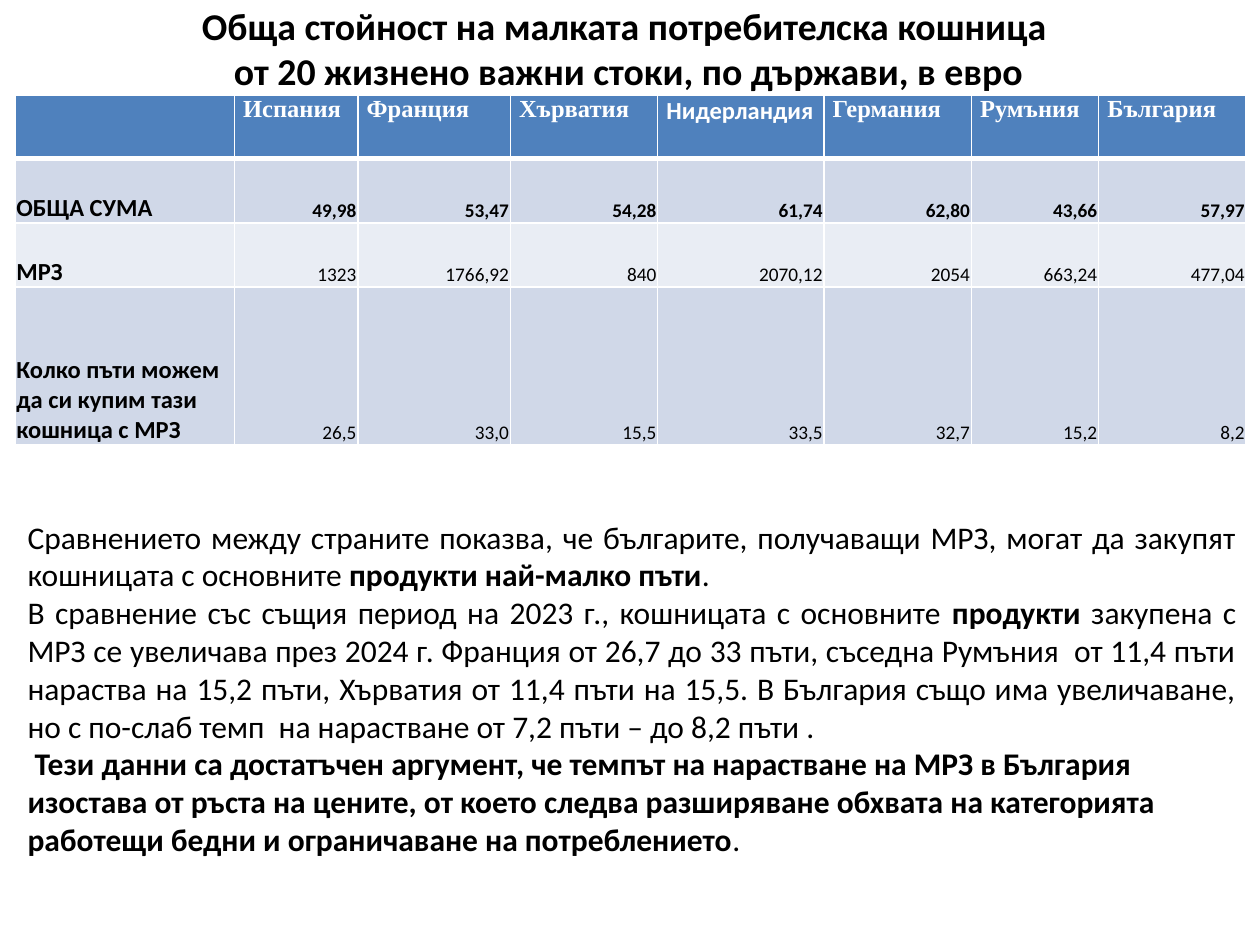
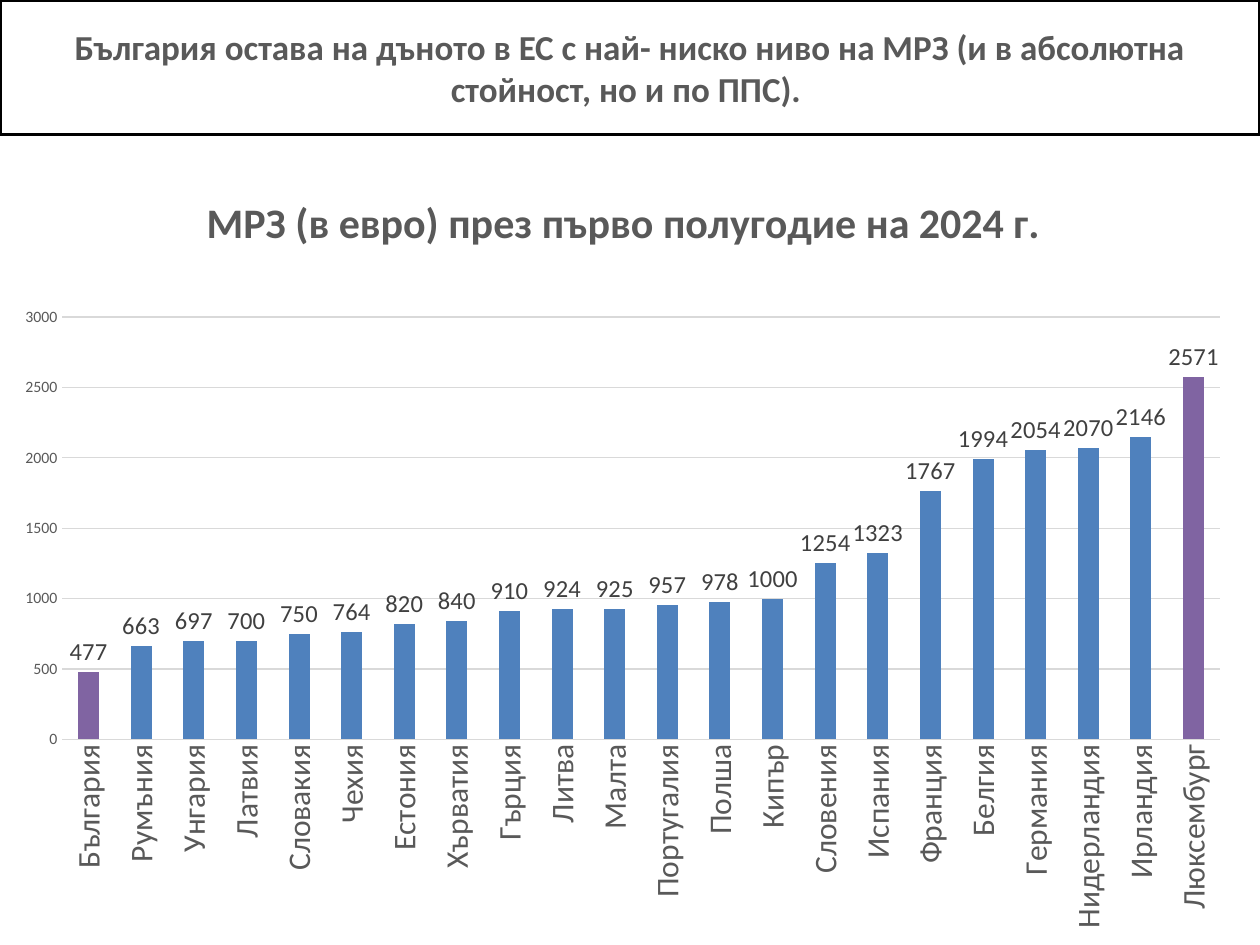
from lxml import etree
from pptx import Presentation
from pptx.chart.data import CategoryChartData
from pptx.dml.color import RGBColor
from pptx.enum.chart import XL_CHART_TYPE, XL_LABEL_POSITION, XL_TICK_MARK
from pptx.enum.shapes import MSO_SHAPE
from pptx.enum.text import MSO_ANCHOR, PP_ALIGN
from pptx.oxml.ns import qn
from pptx.util import Inches, Pt

LEFT, CENTER, RIGHT, JUSTIFY = PP_ALIGN.LEFT, PP_ALIGN.CENTER, PP_ALIGN.RIGHT, PP_ALIGN.JUSTIFY
TOP, MIDDLE, BOTTOM = MSO_ANCHOR.TOP, MSO_ANCHOR.MIDDLE, MSO_ANCHOR.BOTTOM
COLUMNS, RECTANGLE = XL_CHART_TYPE.COLUMN_CLUSTERED, MSO_SHAPE.RECTANGLE
OUTSIDE, NO_TICK = XL_LABEL_POSITION.OUTSIDE_END, XL_TICK_MARK.NONE

FONT, SERIF = "Calibri", "Times New Roman"
BLACK, WHITE, GREY, DARK_GREY, GRID = "000000", "FFFFFF", "595959", "404040", "D9D9D9"
BLUE, PURPLE, BAND_DARK, BAND_LIGHT = "4F81BD", "8064A2", "D0D8E8", "E9EDF4"

BASKET_TITLE = ["Обща стойност на малката потребителска кошница",
                " от 20 жизнено важни стоки, по държави, в евро"]
COUNTRIES = ["Испания", "Франция", "Хърватия", "Нидерландия", "Германия", "Румъния", "България"]
BASKET_ROWS = [
    ("ОБЩА СУМА", "49,98 53,47 54,28 61,74 62,80 43,66 57,97", BAND_DARK, True),
    ("МРЗ", "1323 1766,92 840 2070,12 2054 663,24 477,04", BAND_LIGHT, False),
    ("Колко пъти можем да си купим тази кошница с МРЗ",
     "26,5 33,0 15,5 33,5 32,7 15,2 8,2", BAND_DARK, False),
]
COLUMN_WIDTHS = [1.74, 0.98, 1.21, 1.17, 1.32, 1.17, 1.01, 1.17]
ROW_HEIGHTS = [0.5, 0.51, 0.51, 1.25]
COMMENTS = [
    (JUSTIFY, [
        ("Сравнението между страните показва, че българите, получаващи МРЗ, могат да закупят "
         "кошницата с основните ", False),
        ("продукти най-малко пъти", True), (". ", False)]),
    (JUSTIFY, [
        ("В сравнение със същия период на 2023 г., кошницата с основните ", False),
        ("продукти", True),
        (" закупена с МРЗ се увеличава през 2024 г. Франция от 26,7 до 33 пъти, съседна Румъния  "
         "от 11,4 пъти нараства на 15,2 пъти, Хърватия от 11,4 пъти на 15,5. В България също има "
         "увеличаване, но с по-слаб темп  на нарастване от 7,2 пъти – до 8,2 пъти . ", False)]),
    (LEFT, [
        (" Тези данни са достатъчен аргумент, че темпът на нарастване на МРЗ в България изостава "
         "от ръста на цените, от което следва разширяване обхвата на категорията работещи бедни "
         "и ограничаване на потреблението", True), (".", False)]),
]
EU_TITLE = ["България остава на дъното в ЕС с най- ниско ниво на МРЗ "
            "(и в абсолютна стойност, но и по ППС). "]
CHART_TITLE = "МРЗ (в евро) през първо полугодие на 2024 г. "
MIN_WAGES = {
    "България": 477, "Румъния": 663, "Унгария": 697, "Латвия": 700, "Словакия": 750,
    "Чехия": 764, "Естония": 820, "Хърватия": 840, "Гърция": 910, "Литва": 924, "Малта": 925,
    "Португалия": 957, "Полша": 978, "Кипър": 1000, "Словения": 1254, "Испания": 1323,
    "Франция": 1767, "Белгия": 1994, "Германия": 2054, "Нидерландия": 2070,
    "Ирландия": 2146, "Люксембург": 2571,
}
HIGHLIGHTED = ("България", "Люксембург")


def rgb(value):
    """Turn a hex string into a colour."""
    return RGBColor.from_string(value)


def set_attrs(obj, **values):
    """Set several attributes of an object."""
    for name, value in values.items():
        setattr(obj, name, value)


def style_font(font, size, color, bold=False, name=FONT):
    """Give a font its size, colour, weight and typeface."""
    set_attrs(font, size=Pt(size), bold=bold, name=name)
    font.color.rgb = rgb(color)


def fill_solid(obj, color):
    """Fill a shape, cell, series or point with one colour."""
    obj.fill.solid()
    obj.fill.fore_color.rgb = rgb(color)


def style_line(line, color, width):
    """Give a line its colour and width."""
    line.color.rgb = rgb(color)
    line.width = Pt(width)


def write_paragraphs(tf, paragraphs, size, color, name=FONT):
    """Write (alignment, [(text, bold)]) paragraphs into a text frame."""
    for i, (align, runs) in enumerate(paragraphs):
        p = tf.paragraphs[0] if i == 0 else tf.add_paragraph()
        p.alignment = align
        for text, bold in runs:
            r = p.add_run()
            r.text = text
            style_font(r.font, size, color, bold, name)


def add_text(s, box, paragraphs, size, color, anchor=TOP):
    """Add a wrapping text box."""
    sp = s.shapes.add_textbox(*map(Inches, box))
    set_attrs(sp.text_frame, word_wrap=True, vertical_anchor=anchor)
    write_paragraphs(sp.text_frame, paragraphs, size, color)
    return sp


def add_title(s, lines, box, size, color):
    """Add a bold centred title, one paragraph for each line."""
    return add_text(s, box, [(CENTER, [(line, True)]) for line in lines], size, color, MIDDLE)


def set_borders(cell, bottom):
    """Draw white cell borders, with the bottom one of the given width."""
    tcPr = cell._tc.get_or_add_tcPr()
    for i, (side, width) in enumerate((("lnL", 1), ("lnR", 1), ("lnT", 1), ("lnB", bottom))):
        ln = etree.Element(qn(f"a:{side}"), w=str(Pt(width)))
        solid = etree.SubElement(ln, qn("a:solidFill"))
        etree.SubElement(solid, qn("a:srgbClr"), val=WHITE)
        tcPr.insert(i, ln)


def style_cell(cell, text, fill, align, size, color, bold, name=FONT, header=False):
    """Fill one table cell and write its text."""
    side = Inches(0.07 if header else 0.01)
    set_attrs(cell, margin_left=side, margin_right=side, margin_bottom=0,
              margin_top=0 if header else side, vertical_anchor=TOP if header else BOTTOM)
    fill_solid(cell, fill)
    set_borders(cell, 3 if header else 1)
    write_paragraphs(cell.text_frame, [(align, [(text, bold)] if text else [])], size, color, name)


def add_basket_table(s):
    """Add the table of basket cost and minimum wage by country."""
    table = s.shapes.add_table(len(ROW_HEIGHTS), len(COLUMN_WIDTHS), Inches(0.12), Inches(0.76),
                               Inches(sum(COLUMN_WIDTHS)), Inches(sum(ROW_HEIGHTS))).table
    for column, width in zip(table.columns, COLUMN_WIDTHS):
        column.width = Inches(width)
    for row, height in zip(table.rows, ROW_HEIGHTS):
        row.height = Inches(height)
    for j, country in enumerate([""] + COUNTRIES):
        name = FONT if country == "Нидерландия" else SERIF
        style_cell(table.cell(0, j), country, BLUE, JUSTIFY, 14, WHITE, True, name, header=True)
    for i, (label, values, fill, bold) in enumerate(BASKET_ROWS, 1):
        style_cell(table.cell(i, 0), label, fill, LEFT, 14, BLACK, True)
        for j, value in enumerate(values.split(), 1):
            style_cell(table.cell(i, j), value, fill, RIGHT, 11, BLACK, bold)


def set_layout(element, index, **places):
    """Place a chart part by fractions of the chart area."""
    layout = element.find(qn("c:layout"))
    if layout is None:
        layout = etree.Element(qn("c:layout"))
        element.insert(index, layout)
    manual = etree.SubElement(layout, qn("c:manualLayout"))
    if "w" in places:
        etree.SubElement(manual, qn("c:layoutTarget"), val="inner")
    for key in ("x", "y"):
        etree.SubElement(manual, qn(f"c:{key}Mode"), val="edge")
    for key, value in places.items():
        etree.SubElement(manual, qn(f"c:{key}"), val=str(value))


def style_axes(chart):
    """Format both axes and the gridlines."""
    cat, val = chart.category_axis, chart.value_axis
    for axis, size in ((cat, 18), (val, 9)):
        set_attrs(axis, major_tick_mark=NO_TICK, minor_tick_mark=NO_TICK)
        style_font(axis.tick_labels.font, size, GREY)
    style_line(cat.format.line, GRID, 0.75)
    cat._element.find(qn("c:txPr")).find(qn("a:bodyPr")).set("rot", "-5400000")
    set_attrs(val, minimum_scale=0, maximum_scale=3000, major_unit=500, has_major_gridlines=True)
    val.format.line.fill.background()
    style_line(val.major_gridlines.format.line, GRID, 0.75)
    set_attrs(val.tick_labels, number_format="0", number_format_is_linked=False)


def add_wage_chart(s):
    """Add the column chart of minimum wages."""
    data = CategoryChartData(number_format="0")
    data.categories = list(MIN_WAGES)
    data.add_series("Series 1", list(MIN_WAGES.values()))
    chart = s.shapes.add_chart(COLUMNS, Inches(0), Inches(1.23), Inches(9.88), Inches(6.27),
                               data).chart
    set_attrs(chart, has_legend=False, has_title=True)
    style_font(chart.font, 10, BLACK)
    title = chart.chart_title
    write_paragraphs(title.text_frame, [(CENTER, [(CHART_TITLE, True)])], 24, GREY)
    set_layout(title._element, 1, x=0.16, y=0.04)
    set_layout(chart._chartSpace.chart.plotArea, 0, x=0.05, y=0.205, w=0.93, h=0.535)
    style_axes(chart)
    plot = chart.plots[0]
    set_attrs(plot, gap_width=150, vary_by_categories=False, has_data_labels=True)
    set_attrs(plot.data_labels, show_value=True, position=OUTSIDE, number_format="0",
              number_format_is_linked=False)
    style_font(plot.data_labels.font, 14, DARK_GREY)
    series = plot.series[0]
    fill_solid(series.format, BLUE)
    for i, country in enumerate(MIN_WAGES):
        if country in HIGHLIGHTED:
            fill_solid(series.points[i].format, PURPLE)


def add_title_frame(s, box):
    """Add the white outlined rectangle behind a title."""
    sp = s.shapes.add_shape(RECTANGLE, *map(Inches, box))
    sp.shadow.inherit = False
    fill_solid(sp, WHITE)
    style_line(sp.line, BLACK, 2)
    return sp


def build_basket_slide(s):
    """Build the slide comparing basket costs."""
    add_title(s, BASKET_TITLE, (0, 0, 9.91, 0.76), 21.6, BLACK)
    add_basket_table(s)
    add_text(s, (0.12, 4.06, 9.79, 2.83), COMMENTS, 18, BLACK)


def build_wage_slide(s):
    """Build the slide comparing minimum wages in the EU."""
    sp = add_title_frame(s, (0, 0, 10, 1.07))
    set_attrs(sp.text_frame, word_wrap=True, vertical_anchor=MIDDLE)
    write_paragraphs(sp.text_frame, [(CENTER, [(line, True)]) for line in EU_TITLE], 20, GREY)
    add_wage_chart(s)


def main():
    """Build and save the presentation."""
    prs = Presentation()
    set_attrs(prs, slide_width=Inches(10), slide_height=Inches(7.5))
    for build in (build_basket_slide, build_wage_slide):
        build(prs.slides.add_slide(prs.slide_layouts[6]))
    prs.save("out.pptx")


if __name__ == "__main__":
    main()
